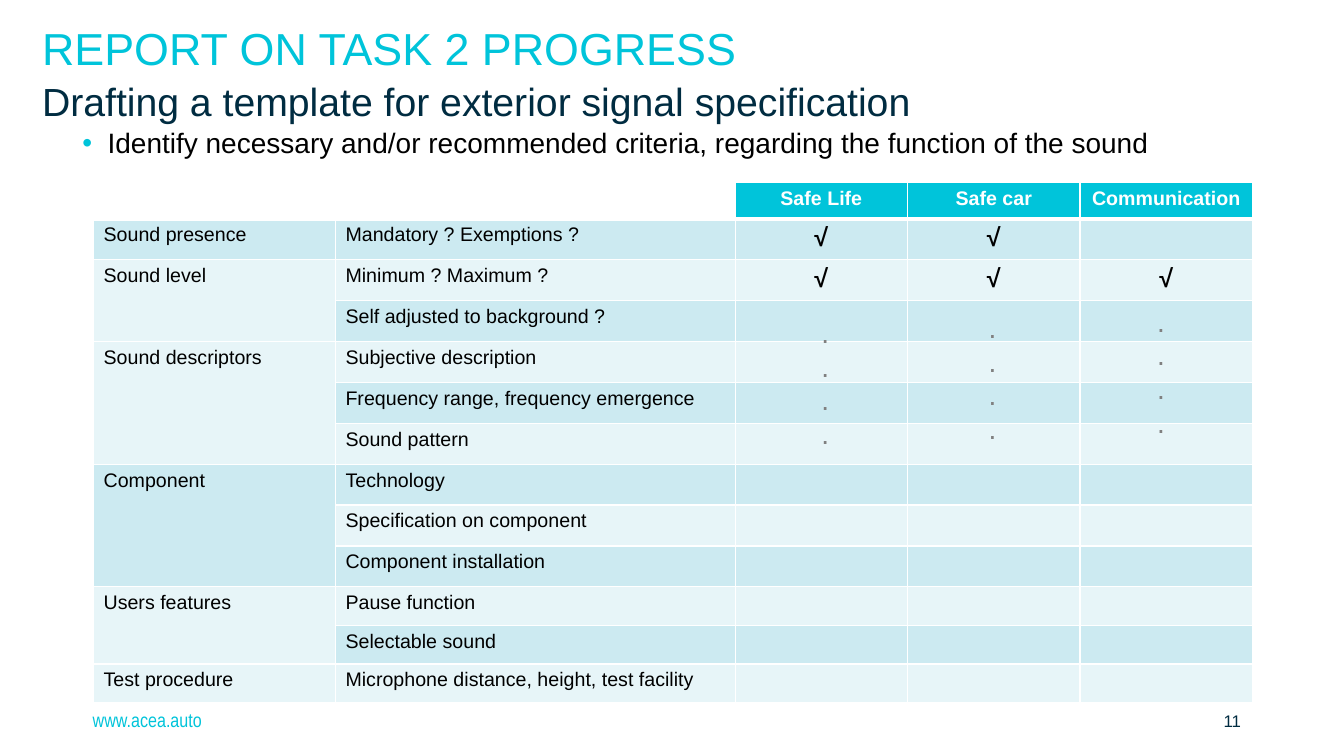
"""Build the slide with the exterior signal specification template."""
from dataclasses import dataclass

from lxml.etree import SubElement
from pptx import Presentation
from pptx.dml.color import RGBColor
from pptx.enum.text import MSO_ANCHOR as Anchor, PP_ALIGN as Align
from pptx.oxml.ns import qn
from pptx.slide import Slide
from pptx.table import _Cell as Cell
from pptx.text.text import TextFrame
from pptx.util import Pt

CYAN, NAVY, BLACK, WHITE, GREY = "00C4DA", "002C41", "000000", "FFFFFF", "808080"
BANDS = ("E7F5F8", "CCEAF1")
CHECK = "√"
COLUMN_WIDTHS = (172.8, 285.5, 123.2, 123.2, 123.2)
HEADER_HEIGHT, ROW_HEIGHT, LAST_ROW_HEIGHT = 26, 29.2, 27.6
TABLE_LEFT, TABLE_TOP = 66.8, 130.4
HEADINGS = ("Safe Life", "Safe car", "Communication")


@dataclass
class Label:
    text: str
    left: float
    top: float
    width: float
    height: float
    size: float
    color: str
    font: str = "Arial"
    align: Align = Align.LEFT
    anchor: Anchor = Anchor.TOP
    spacing: float = 1.0
    wrap: bool = True
    inset: float = 7.2
    bullet: bool = False


@dataclass
class Criterion:
    name: str
    checks: int = 0


@dataclass
class Topic:
    name: str
    criteria: list[Criterion]


LABELS = [
    Label("11", 836.6, 500.4, 56.9, 28.8, 12, NAVY, align=Align.RIGHT, anchor=Anchor.MIDDLE),
    Label("REPORT ON TASK 2 PROGRESS", 23, 15.8, 828, 56.2, 32, CYAN, spacing=0.9),
    Label("www.acea.auto", 66.2, 499.7, 111.6, 28.8, 14, CYAN, "Arial Narrow",
          anchor=Anchor.MIDDLE, inset=0),
    Label("Identify necessary and/or recommended criteria, regarding the function of the sound",
          51.8, 88.6, 828, 67, 20, BLACK, spacing=0.9, bullet=True),
    Label("Drafting a template for exterior signal specification",
          23, 55.4, 828, 50.4, 28, NAVY, spacing=0.9),
]
DOTS = [
    Label("\n".join("." * 4), left, top, 20.2, 104.4, 20, GREY, wrap=False)
    for left, top in ((579.6, 221.8), (699.1, 218.2), (819.4, 213.8))
]
TOPICS = [
    Topic("Sound presence", [Criterion("Mandatory ? Exemptions ?", 2)]),
    Topic("Sound level", [Criterion("Minimum ? Maximum ?", 3),
                          Criterion("Self adjusted to background ?")]),
    Topic("Sound descriptors", [Criterion("Subjective description"),
                                Criterion("Frequency range, frequency emergence"),
                                Criterion("Sound pattern")]),
    Topic("Component", [Criterion("Technology"), Criterion("Specification on component"),
                        Criterion("Component installation")]),
    Topic("Users features", [Criterion("Pause function"), Criterion("Selectable sound")]),
    Topic("Test procedure", [Criterion("Microphone distance, height, test facility")]),
]


def rgb(color: str) -> RGBColor:
    """Turn a hex string into a colour."""
    return RGBColor.from_string(color)


def write(frame: TextFrame, text: str, size: float, color: str, font: str = "Arial",
          align: Align = Align.LEFT, bold: bool = False) -> None:
    """Fill a text frame and format all its runs alike."""
    frame.text = text
    for paragraph in frame.paragraphs:
        paragraph.alignment = align
        for run in paragraph.runs:
            run.font.name, run.font.size, run.font.bold = font, Pt(size), bold
            run.font.color.rgb = rgb(color)


def add_label(slide: Slide, label: Label) -> None:
    """Add a text box described by a label."""
    shape = slide.shapes.add_textbox(
        Pt(label.left), Pt(label.top), Pt(label.width), Pt(label.height))
    frame = shape.text_frame
    frame.word_wrap = label.wrap
    frame.vertical_anchor = label.anchor
    frame.margin_left = Pt(label.inset)
    write(frame, label.text, label.size, label.color, label.font, label.align)
    for paragraph in frame.paragraphs:
        paragraph.line_spacing = label.spacing
    if label.bullet:
        properties = frame.paragraphs[0]._p.get_or_add_pPr()
        properties.set("marL", str(Pt(18)))
        properties.set("indent", str(Pt(-18)))
        bullet_color = SubElement(properties, qn("a:buClr"))
        SubElement(bullet_color, qn("a:srgbClr"), val=CYAN)
        SubElement(properties, qn("a:buFont"), typeface="Arial")
        SubElement(properties, qn("a:buChar"), char="•")


def add_borders(cell: Cell, top: float, bottom: float) -> None:
    """Draw white lines on the four sides of a cell."""
    properties = cell._tc.get_or_add_tcPr()
    for side, width in (("L", 1), ("R", 1), ("T", top), ("B", bottom)):
        line = SubElement(properties, qn(f"a:ln{side}"), w=str(Pt(width)))
        fill = SubElement(line, qn("a:solidFill"))
        SubElement(fill, qn("a:srgbClr"), val=WHITE)


def add_criteria_table(slide: Slide) -> None:
    """Add the table of topics, criteria and signal functions."""
    count = sum(len(topic.criteria) for topic in TOPICS)
    heights = [HEADER_HEIGHT] + [ROW_HEIGHT] * (count - 3) + [LAST_ROW_HEIGHT] * 3
    table = slide.shapes.add_table(
        count + 1, len(COLUMN_WIDTHS), Pt(TABLE_LEFT), Pt(TABLE_TOP),
        Pt(sum(COLUMN_WIDTHS)), Pt(sum(heights))).table
    table.first_row = table.horz_banding = False
    for column, width in zip(table.columns, COLUMN_WIDTHS):
        column.width = Pt(width)
    for index, height in enumerate(heights):
        table.rows[index].height = Pt(height)
        for position, cell in enumerate(table.rows[index].cells):
            add_borders(cell, 3 if index == 1 else 1, 3 if index == 0 else 1)
            if index == 0 and position < 2:
                cell.fill.background()
            else:
                cell.fill.solid()
                cell.fill.fore_color.rgb = rgb(BANDS[index % 2] if index else CYAN)
            cell.margin_top = cell.margin_bottom = Pt(0)
    for position, heading in enumerate(HEADINGS, 2):
        fill_cell(table.cell(0, position), heading, 14, WHITE, Align.CENTER, True)
    index = 1
    for topic in TOPICS:
        first = table.cell(index, 0)
        fill_cell(first, topic.name, 14, BLACK)
        if len(topic.criteria) > 1:
            first.merge(table.cell(index + len(topic.criteria) - 1, 0))
        for criterion in topic.criteria:
            fill_cell(table.cell(index, 1), criterion.name, 14, BLACK)
            for position in range(2, 2 + criterion.checks):
                fill_cell(table.cell(index, position), CHECK, 18, BLACK, Align.CENTER, True)
            index += 1


def fill_cell(cell: Cell, text: str, size: float, color: str,
              align: Align = Align.LEFT, bold: bool = False) -> None:
    """Write formatted text in a table cell."""
    cell.margin_top = cell.margin_bottom = Pt(3.6)
    write(cell.text_frame, text, size, color, align=align, bold=bold)


def main() -> None:
    """Create and save the presentation."""
    presentation = Presentation()
    presentation.slide_width, presentation.slide_height = Pt(960), Pt(540)
    slide = presentation.slides.add_slide(presentation.slide_layouts[6])
    for label in LABELS:
        add_label(slide, label)
    add_criteria_table(slide)
    for label in DOTS:
        add_label(slide, label)
    presentation.save("out.pptx")


if __name__ == "__main__":
    main()
